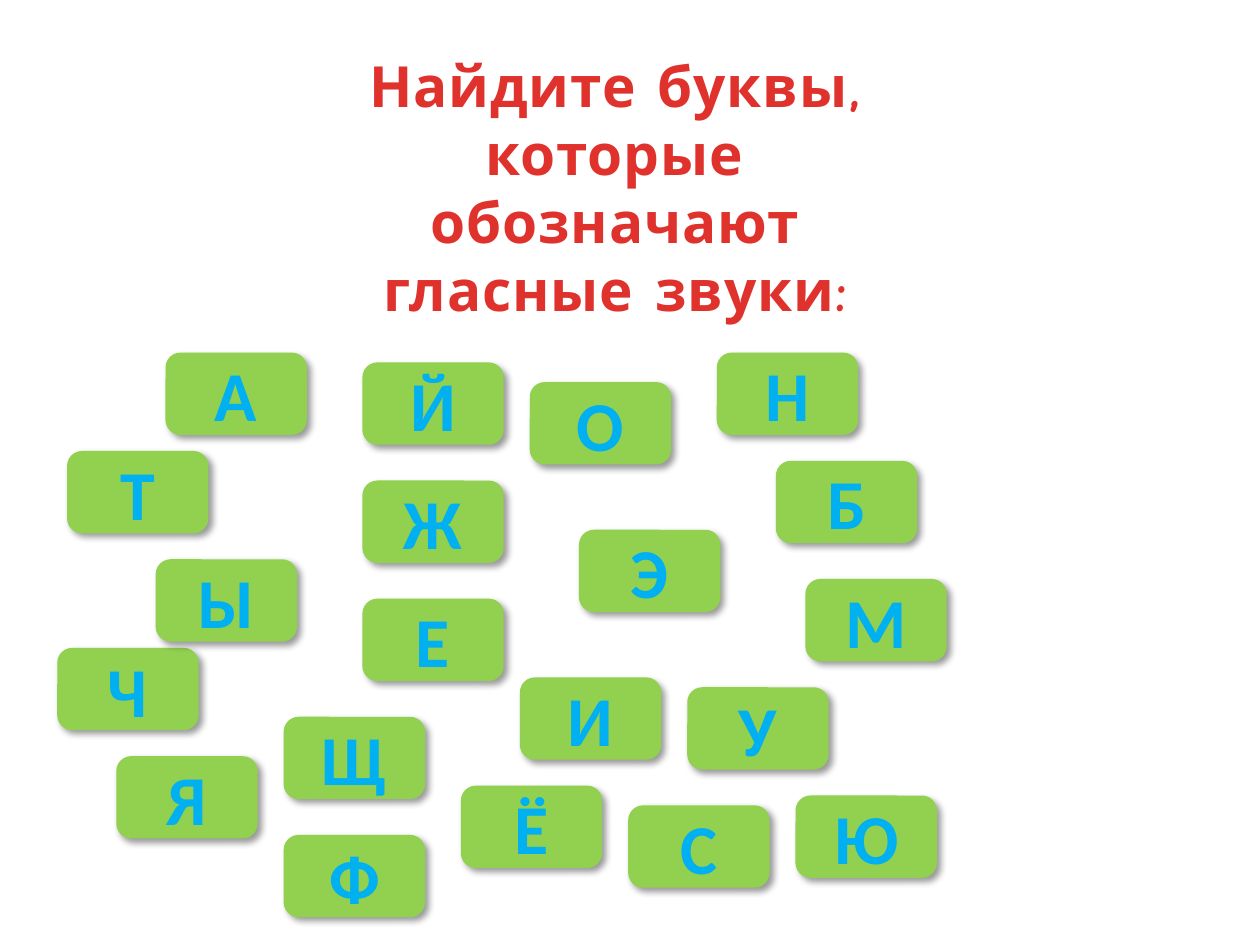
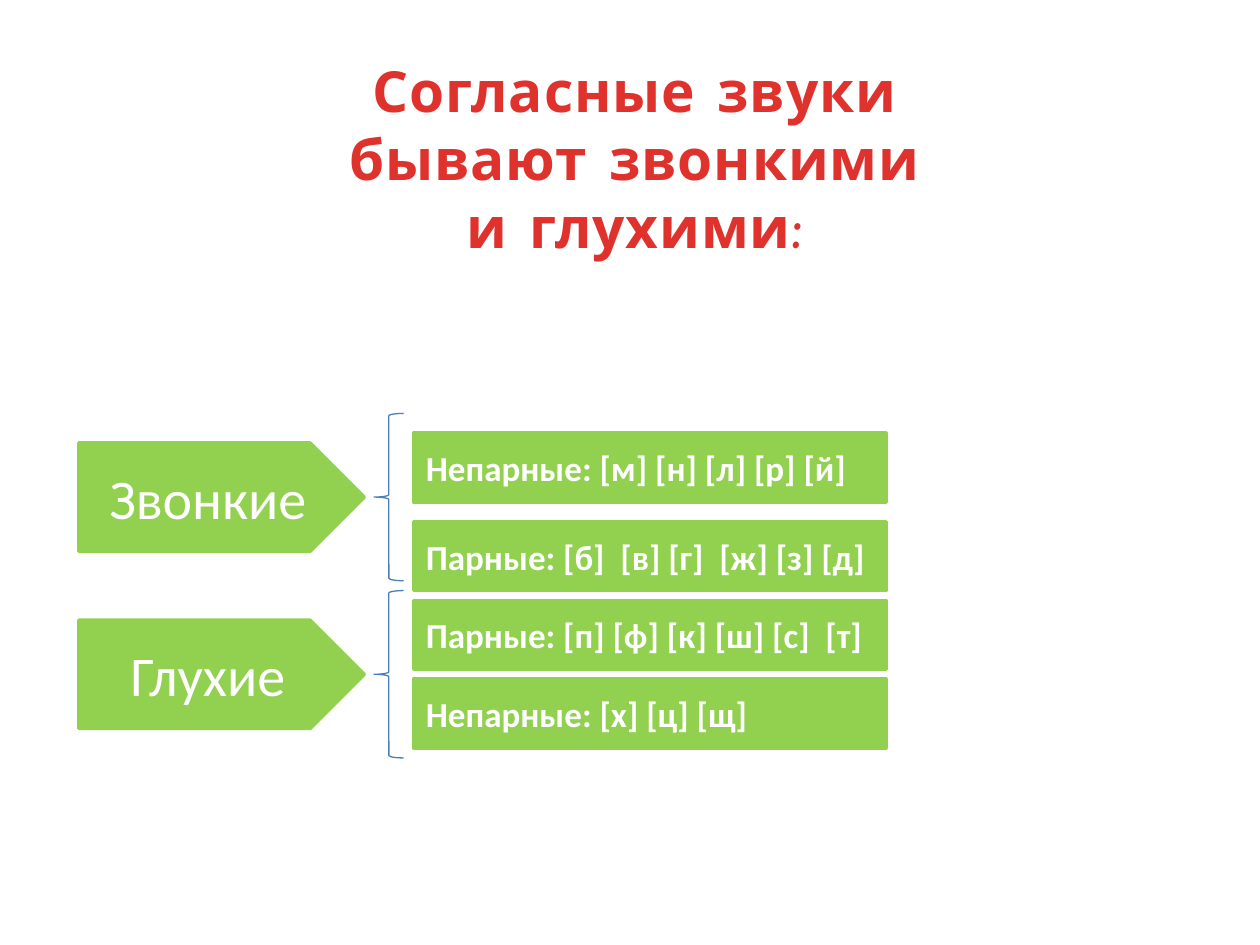
from lxml import etree
from pptx import Presentation
from pptx.dml.color import RGBColor
from pptx.enum.shapes import MSO_SHAPE
from pptx.enum.text import MSO_ANCHOR, PP_ALIGN
from pptx.oxml.ns import qn
from pptx.util import Inches, Pt

ROUNDED, PENTAGON = MSO_SHAPE.ROUNDED_RECTANGLE, MSO_SHAPE.PENTAGON
RECTANGLE, BRACE = MSO_SHAPE.RECTANGLE, MSO_SHAPE.LEFT_BRACE
CENTER, LEFT = PP_ALIGN.CENTER, PP_ALIGN.LEFT
MIDDLE = MSO_ANCHOR.MIDDLE

COLORS = {
    "title_top": "E0322D",
    "title_bottom": "A2201C",
    "green": "92D050",
    "letter": "00B0F0",
    "white": "FFFFFF",
    "brace": "4B7EBC",
    "shadow": "000000",
}
TITLE_FONT, BODY_FONT = "Comic Neue", "Calibri"
TITLE_ONLY = 5
SLIDE_WIDTH, SLIDE_HEIGHT = Inches(10), Inches(7.5)
COLUMNS, ROWS = 128, 96

# Column and row of each letter tile
LETTERS = {
    "Н": (73, 36), "Ф": (29, 85), "Б": (79, 47), "Ч": (6, 66), "С": (64, 82),
    "Т": (7, 46), "М": (82, 59), "Щ": (29, 73), "Й": (37, 37), "Ж": (37, 49),
    "Ю": (81, 81), "И": (53, 69), "Ы": (16, 57), "Я": (12, 77), "Э": (59, 54),
    "Ё": (47, 80), "Е": (37, 61), "У": (70, 70), "О": (54, 39), "А": (17, 36),
}
TILE_SIZE = (14, 8)

# Box of each group, its name, and its sounds with the row inside the box
SOUND_GROUPS = [
    ((8, 42, 82, 17), "Звонкие", [
        (2, "Непарные: [м] [н] [л] [р] [й]"),
        (11, "Парные: [б]  [в] [г]  [ж] [з] [д]"),
    ]),
    ((8, 60, 82, 17), "Глухие", [
        (1, "Парные: [п] [ф] [к] [ш] [с]  [т]"),
        (9, "Непарные: [х] [ц] [щ]"),
    ]),
]


def color(name):
    return RGBColor.from_string(COLORS[name])


def grid_box(column, row, columns, rows):
    """Turn grid cells into left, top, width and height on the slide."""
    return (int(SLIDE_WIDTH * column / COLUMNS), int(SLIDE_HEIGHT * row / ROWS),
            int(SLIDE_WIDTH * columns / COLUMNS), int(SLIDE_HEIGHT * rows / ROWS))


def add_title_slide(presentation, text, box):
    slide = presentation.slides.add_slide(presentation.slide_layouts[TITLE_ONLY])
    title = slide.shapes.title
    title.left, title.top, title.width, title.height = grid_box(*box)
    title.text_frame.vertical_anchor = MIDDLE
    title.text_frame.word_wrap = True
    paragraph = title.text_frame.paragraphs[0]
    paragraph.alignment = CENTER
    run = paragraph.add_run()
    run.text = text
    font = run.font
    font.name, font.size, font.bold = TITLE_FONT, Pt(32.4), True
    font.fill.gradient()
    font.fill.gradient_angle = 270
    stops = zip(font.fill.gradient_stops, (0.25, 1), ("title_top", "title_bottom"))
    for stop, position, name in stops:
        stop.position = position
        stop.color.rgb = color(name)
    run._r.get_or_add_rPr().set("spc", "50")
    return slide


def add_label(slide, kind, box, text, size, text_color="white", bold=True, alignment=CENTER):
    """Add a green shape with one line of text."""
    shape = slide.shapes.add_shape(kind, *grid_box(*box))
    shape.shadow.inherit = False
    shape.fill.solid()
    shape.fill.fore_color.rgb = color("green")
    shape.line.color.rgb = color("green")
    shape.line.width = Pt(2)
    shape.text_frame.vertical_anchor = MIDDLE
    paragraph = shape.text_frame.paragraphs[0]
    paragraph.alignment = alignment
    run = paragraph.add_run()
    run.text = text
    run.font.name, run.font.size, run.font.bold = BODY_FONT, Pt(size), bold
    run.font.color.rgb = color(text_color)
    return shape


def add_drop_shadow(shape):
    effects = shape._element.spPr.find(qn("a:effectLst"))
    shadow = etree.SubElement(
        effects, qn("a:outerShdw"), blurRad=str(Pt(4)), dist=str(Pt(3)),
        dir=str(45 * 60000), algn="tl", rotWithShape="0")
    shade = etree.SubElement(shadow, qn("a:srgbClr"), val=COLORS["shadow"])
    etree.SubElement(shade, qn("a:alpha"), val="40000")


def add_sound_group(slide, box, name, sounds):
    """Add a named arrow, a brace and the bars of sounds inside the box."""
    left, top, width, height = box
    add_label(slide, PENTAGON, (left, top + 3, 29, height - 6), name, 32, bold=False)
    brace = slide.shapes.add_shape(BRACE, *grid_box(left + 30, top, 3, height))
    brace.shadow.inherit = False
    brace.fill.background()
    brace.line.color.rgb = color("brace")
    brace.line.width = Pt(0.75)
    for row, text in sounds:
        add_label(slide, RECTANGLE, (left + 34, top + row, width - 34, 7), text, 20,
                  alignment=LEFT)


def build_vowels_slide(presentation):
    slide = add_title_slide(
        presentation, "Найдите буквы, которые обозначают гласные звуки:", (29, 11, 67, 16))
    for letter, position in LETTERS.items():
        tile = add_label(slide, ROUNDED, position + TILE_SIZE, letter, 40, "letter")
        add_drop_shadow(tile)


def build_consonants_slide(presentation):
    slide = add_title_slide(
        presentation, "Согласные звуки бывают звонкими и глухими:", (31, 8, 67, 16))
    for box, name, sounds in SOUND_GROUPS:
        add_sound_group(slide, box, name, sounds)


def main():
    presentation = Presentation()
    presentation.slide_width, presentation.slide_height = SLIDE_WIDTH, SLIDE_HEIGHT
    build_vowels_slide(presentation)
    build_consonants_slide(presentation)
    presentation.save("out.pptx")


if __name__ == "__main__":
    main()
